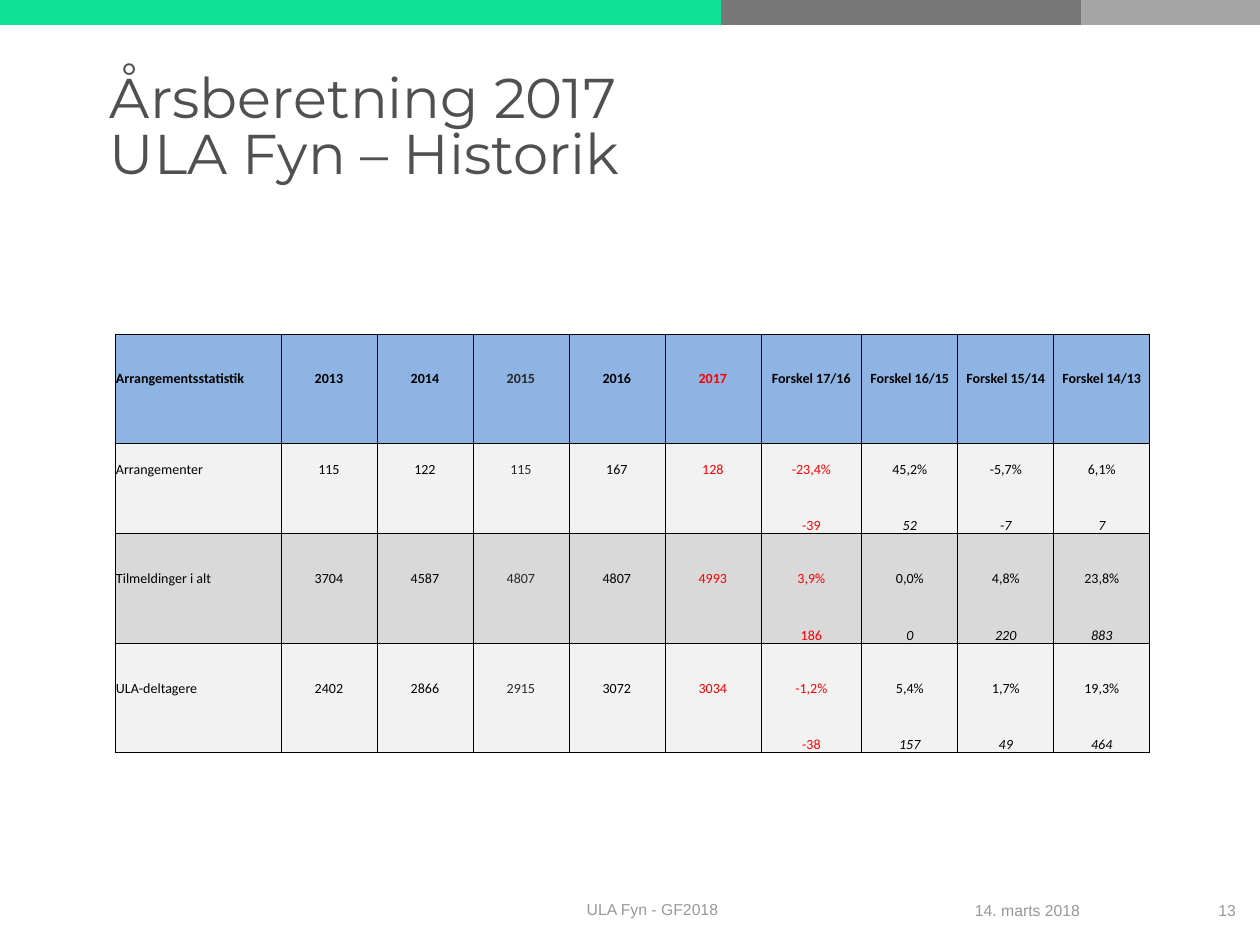
import pptx
import pptx.dml.color
import pptx.enum.shapes
import pptx.enum.text
import pptx.oxml.ns
import pptx.util
import lxml.etree

PX = 914400 // 126  # EMU per px
THEME = {
    "green": "0FE196", "dark": "787878", "light": "A5A5A5",
    "title": "505050", "footer": "989898",
    "text": "000000", "soft": "282828", "accent": "FF0000",
    "header": "8DB4E2", "pale": "F2F2F2", "band": "D9D9D9", "border": "000000",
    "title_font": "Montserrat", "footer_font": "Arial", "table_font": "Calibri",
    "title_size": 32, "footer_size": 9, "table_size": 8, "border_width": 0.5,
}
ALIGN = pptx.enum.text.PP_ALIGN
ANCHOR = pptx.enum.text.MSO_ANCHOR


def style_text(frame, part, color, align, bold=False, italic=False):
    for paragraph in frame.paragraphs:
        paragraph.alignment = align
        for run in paragraph.runs:
            run.font.name = THEME[part + "_font"]
            run.font.size = pptx.util.Pt(THEME[part + "_size"])
            run.font.color.rgb = pptx.dml.color.RGBColor.from_string(THEME[color])
            run.font.bold = bold
            run.font.italic = italic


def set_borders(cell, visible):
    properties = cell._tc.get_or_add_tcPr()
    for position, side in enumerate("LRTB"):
        line = lxml.etree.Element(pptx.oxml.ns.qn("a:ln" + side))
        line.set("w", str(pptx.util.Pt(THEME["border_width"])))
        if side in visible:
            fill = lxml.etree.SubElement(line, pptx.oxml.ns.qn("a:solidFill"))
            lxml.etree.SubElement(fill, pptx.oxml.ns.qn("a:srgbClr"), val=THEME["border"])
        else:
            lxml.etree.SubElement(line, pptx.oxml.ns.qn("a:noFill"))
        properties.insert(position, line)


presentation = pptx.Presentation()
presentation.slide_width = pptx.util.Inches(10)
presentation.slide_height = pptx.util.Inches(7.5)
slide = presentation.slides.add_slide(presentation.slide_layouts[5])

# Colour strip along the top
for left, width, color in [(1081, 179, "light"), (721, 360, "dark"), (0, 721, "green")]:
    strip = slide.shapes.add_shape(pptx.enum.shapes.MSO_SHAPE.RECTANGLE,
                                   left * PX, 0, width * PX, 25 * PX)
    strip.shadow.inherit = False
    strip.fill.solid()
    strip.fill.fore_color.rgb = pptx.dml.color.RGBColor.from_string(THEME[color])
    strip.line.fill.background()

# Title
title = slide.shapes.title
title.left, title.top, title.width, title.height = 110 * PX, 74 * PX, 1042 * PX, 160 * PX
title.text_frame.text = "Årsberetning 2017\vULA Fyn – Historik"
title.text_frame.paragraphs[0].line_spacing = 0.83
style_text(title.text_frame, "title", "title", ALIGN.LEFT)

# Footer: date, event and page number
footers = []
for left, top, width, words in [(828, 888, 252, "14. marts 2018"),
                                (282, 887, 436, "ULA Fyn - GF2018"),
                                (1172, 888, 64, "13")]:
    footer = slide.shapes.add_textbox(left * PX, top * PX, width * PX, 32 * PX)
    footer.text_frame.text = words
    style_text(footer.text_frame, "footer", "footer", ALIGN.RIGHT)
    footers.append(footer)

for frame, anchor in [(title.text_frame, ANCHOR.TOP)] + [
        (footer.text_frame, ANCHOR.BOTTOM) for footer in footers]:
    frame.word_wrap = True
    frame.auto_size = pptx.enum.text.MSO_AUTO_SIZE.NONE
    frame.vertical_anchor = anchor
    frame.margin_left = frame.margin_right = frame.margin_top = frame.margin_bottom = 0

# Event statistics: each entry fills two table rows, figures above differences
statistics = [
    ("header", ["Arrangementsstatistik", "2013", "2014", "2015", "2016", "2017",
                "Forskel 17/16", "Forskel 16/15", "Forskel 15/14", "Forskel 14/13"],
     ["", "", "", ""]),
    ("pale", ["Arrangementer", "115", "122", "115", "167", "128",
              "-23,4%", "45,2%", "-5,7%", "6,1%"], ["-39", "52", "-7", "7"]),
    ("band", ["Tilmeldinger i alt", "3704", "4587", "4807", "4807", "4993",
              "3,9%", "0,0%", "4,8%", "23,8%"], ["186", "0", "220", "883"]),
    ("pale", ["ULA-deltagere", "2402", "2866", "2915", "3072", "3034",
              "-1,2%", "5,4%", "1,7%", "19,3%"], ["-38", "157", "49", "464"]),
]
column_widths = [166] + [96] * 5 + [101] + [96] * 3
row_heights = [53, 56, 35, 56, 53, 57, 53, 56]
table = slide.shapes.add_table(len(row_heights), len(column_widths), 115 * PX, 334 * PX,
                               sum(column_widths) * PX, sum(row_heights) * PX).table
for column, width in zip(table.columns, column_widths):
    column.width = width * PX
for row, height in zip(table.rows, row_heights):
    row.height = height * PX

for entry, (fill, figures, differences) in enumerate(statistics):
    for half, values in enumerate([figures, [""] * 6 + differences]):
        for index, value in enumerate(values):
            cell = table.cell(2 * entry + half, index)
            cell.fill.solid()
            cell.fill.fore_color.rgb = pptx.dml.color.RGBColor.from_string(THEME[fill])
            cell.margin_left = cell.margin_right = cell.margin_top = PX
            cell.margin_bottom = 0
            cell.vertical_anchor = ANCHOR.BOTTOM
            cell.text_frame.text = value
            color = "soft" if index == 3 else "text"
            if index == 5 or (index == 6 and entry > 0):
                color = "accent"
            style_text(cell.text_frame, "table", color,
                       ALIGN.LEFT if index == 0 else ALIGN.CENTER,
                       bold=entry == 0, italic=half == 1 and index > 6)
            set_borders(cell, "LRB" if half else "LRT")

presentation.save("out.pptx")
